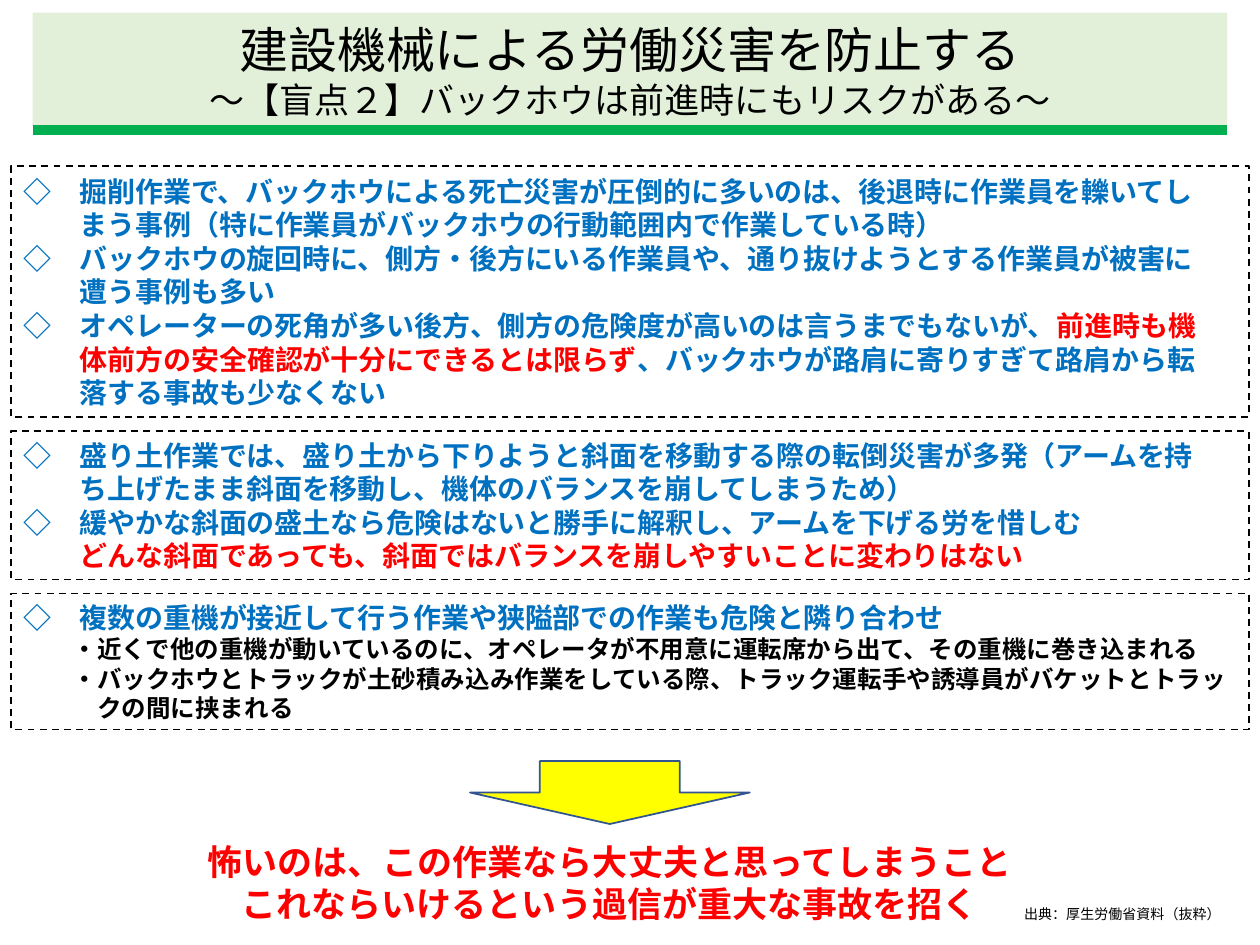
from lxml.etree import SubElement
from pptx import Presentation
from pptx.dml.color import RGBColor
from pptx.enum.dml import MSO_LINE
from pptx.enum.shapes import MSO_CONNECTOR, MSO_SHAPE
from pptx.enum.text import MSO_ANCHOR, PP_ALIGN
from pptx.oxml.ns import qn
from pptx.util import Inches, Pt

FONT = "Noto Sans CJK JP"
COLORS = {name: RGBColor.from_string(code) for name, code in {
    "black": "000000", "blue": "0070C0", "red": "FF0000", "yellow": "FFFF00",
    "band": "E2F0D9", "rule": "00B050", "arrow_edge": "325491"}.items()}

deck = Presentation()
deck.slide_width, deck.slide_height = Inches(10), Inches(7.5)
COL, ROW = deck.slide_width // 100, deck.slide_height // 75


def place(left, top, width, height):
    """Turn columns and rows of the 100 x 75 grid into slide lengths."""
    return int(left * COL), int(top * ROW), int(width * COL), int(height * ROW)


def write(frame, runs, size=16, color="blue", bold=True, align=PP_ALIGN.LEFT,
          margin=0, hang=0):
    """Add a paragraph of text or (text, color) runs; margin and hang are in ems."""
    paragraph = frame.paragraphs[0]
    if paragraph.runs:
        paragraph = frame.add_paragraph()
    paragraph.alignment = align
    paragraph.line_spacing = Pt(size * 1.2)
    paragraph.space_before = paragraph.space_after = Pt(0)
    properties = paragraph._p.get_or_add_pPr()
    properties.set("marL", str(Pt(size * margin)))
    properties.set("indent", str(-Pt(size * hang)))
    for text, run_color in [(runs, color)] if isinstance(runs, str) else runs:
        run = paragraph.add_run()
        run.text = text
        run.font.size, run.font.bold, run.font.name = Pt(size), bold, FONT
        run.font.color.rgb = COLORS[run_color]
        SubElement(run._r.get_or_add_rPr(), qn("a:ea")).set("typeface", FONT)


slide = deck.slides.add_slide(deck.slide_layouts.get_by_name("Title Only"))

# Title band with its rule
title = slide.shapes.title
title.left, title.top, title.width, title.height = place(2.6, 1, 94.8, 9.1)
title.fill.solid()
title.fill.fore_color.rgb = COLORS["band"]
title.text_frame.word_wrap = True
title.text_frame.vertical_anchor = MSO_ANCHOR.MIDDLE
for line, size in [("建設機械による労働災害を防止する", 28),
                   ("～【盲点２】バックホウは前進時にもリスクがある～", 20)]:
    write(title.text_frame, line, size=size, color="black", bold=False,
          align=PP_ALIGN.CENTER)

rule_left, rule_top, rule_width, _ = place(2.6, 10.3, 94.8, 0)
rule = slide.shapes.add_connector(MSO_CONNECTOR.STRAIGHT, rule_left, rule_top,
                                  rule_left + rule_width, rule_top)
rule.line.color.rgb, rule.line.width = COLORS["rule"], Pt(5.5)
SubElement(rule._element.spPr, qn("a:effectLst"))

# Dashed boxes: top row, rows high, right inset in columns, paragraphs
ITEM = {"margin": 2, "hang": 2}
REMARK = {"margin": 2, "color": "red"}
EXAMPLE = {"margin": 3, "hang": 1, "size": 14, "color": "black"}
hazards = [
    (13.2, 19.9, 3, [
        ("◇　掘削作業で、バックホウによる死亡災害が圧倒的に多いのは、後退時に作業員を轢いてし"
         "まう事例（特に作業員がバックホウの行動範囲内で作業している時）", ITEM),
        ("◇　バックホウの旋回時に、側方・後方にいる作業員や、通り抜けようとする作業員が被害に"
         "遭う事例も多い", ITEM),
        ([("◇　オペレーターの死角が多い後方、側方の危険度が高いのは言うまでもないが、", "blue"),
          ("前進時も機体前方の安全確認が十分にできるとは限らず", "red"),
          ("、バックホウが路肩に寄りすぎて路肩から転落する事故も少なくない", "blue")], ITEM)]),
    (34.2, 11.8, 3, [
        ("◇　盛り土作業では、盛り土から下りようと斜面を移動する際の転倒災害が多発（アームを持"
         "ち上げたまま斜面を移動し、機体のバランスを崩してしまうため）", ITEM),
        ("◇　緩やかな斜面の盛土なら危険はないと勝手に解釈し、アームを下げる労を惜しむ", ITEM),
        ("どんな斜面であっても、斜面ではバランスを崩しやすいことに変わりはない", REMARK)]),
    (47.1, 10.8, 1, [
        ("◇　複数の重機が接近して行う作業や狭隘部での作業も危険と隣り合わせ", ITEM),
        ("・近くで他の重機が動いているのに、オペレータが不用意に運転席から出て、"
         "その重機に巻き込まれる", EXAMPLE),
        ("・バックホウとトラックが土砂積み込み作業をしている際、トラック運転手や誘導員が"
         "バケットとトラックの間に挟まれる", EXAMPLE)]),
]
for top, height, inset, paragraphs in hazards:
    box = slide.shapes.add_shape(MSO_SHAPE.RECTANGLE, *place(0.9, top, 98.2, height))
    box.shadow.inherit = False
    box.fill.background()
    box.line.color.rgb, box.line.width = COLORS["black"], Pt(1)
    box.line.dash_style = MSO_LINE.DASH
    box.text_frame.word_wrap = True
    box.text_frame.vertical_anchor = MSO_ANCHOR.MIDDLE
    box.text_frame.margin_right = inset * COL
    for text, style in paragraphs:
        write(box.text_frame, text, **style)

# Conclusion
conclusion = slide.shapes.add_textbox(*place(15.1, 66.2, 66.6, 7.7)).text_frame
conclusion.word_wrap = True
for line in ["怖いのは、この作業なら大丈夫と思ってしまうこと",
             "これならいけるという過信が重大な事故を招く"]:
    write(conclusion, line, size=20, color="red", align=PP_ALIGN.CENTER)

arrow = slide.shapes.add_shape(MSO_SHAPE.DOWN_ARROW, *place(37.3, 60.4, 22.2, 5))
arrow.shadow.inherit = False
arrow.fill.solid()
arrow.fill.fore_color.rgb = COLORS["yellow"]
arrow.line.color.rgb, arrow.line.width = COLORS["arrow_edge"], Pt(1)

citation = slide.shapes.add_textbox(*place(80.3, 71.4, 18.7, 2.4)).text_frame
citation.word_wrap = True
write(citation, "出典：厚生労働省資料（抜粋）", size=8, color="black", bold=False)

deck.save("out.pptx")
